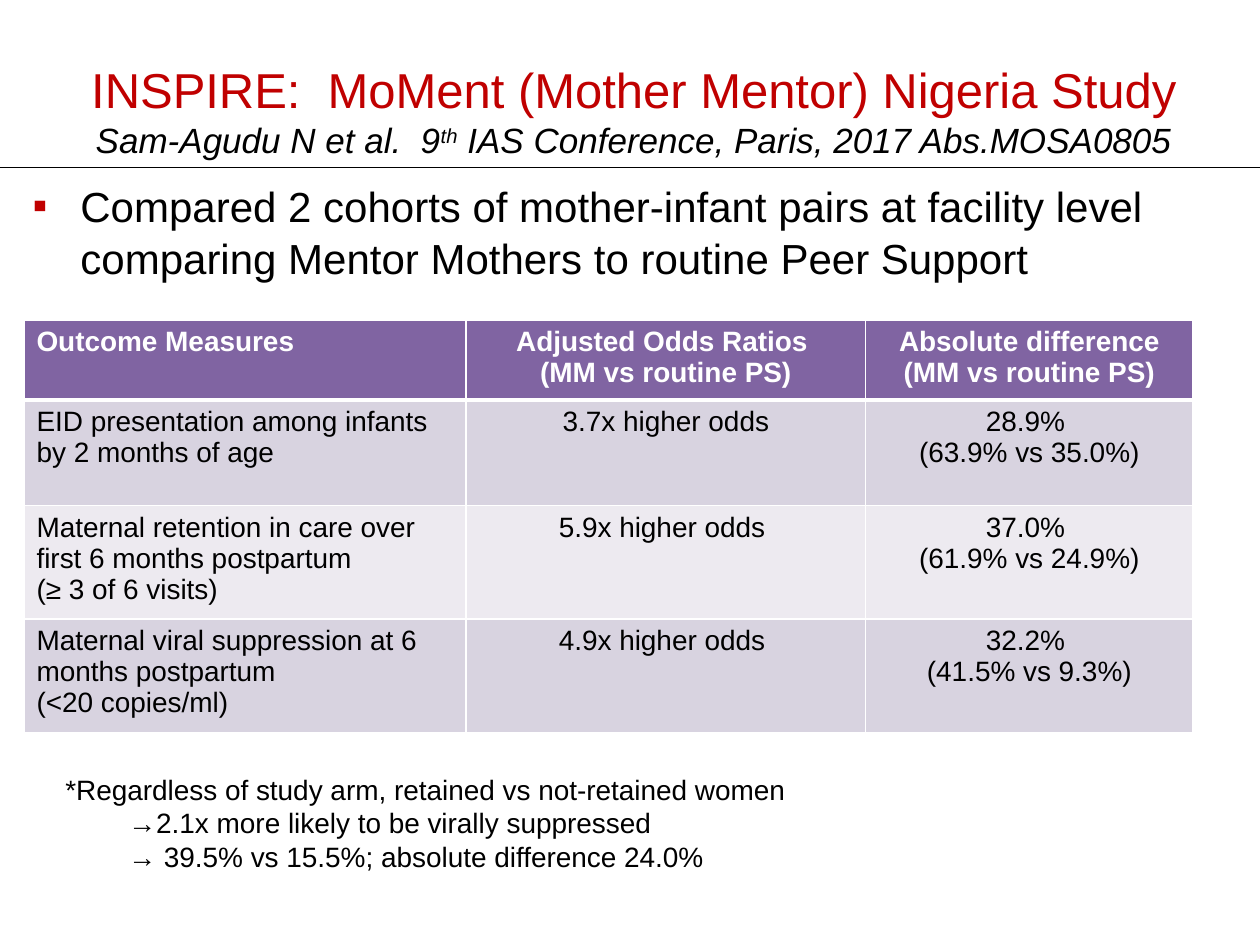
from dataclasses import dataclass

from lxml.etree import SubElement
from pptx import Presentation
from pptx.dml.color import RGBColor
from pptx.enum.shapes import MSO_CONNECTOR
from pptx.enum.text import MSO_ANCHOR, PP_ALIGN
from pptx.oxml import parse_xml
from pptx.oxml.ns import nsdecls, qn
from pptx.util import Inches, Pt


@dataclass(frozen=True)
class Theme:
    font: str = "Arial"
    red: str = "C00000"
    black: str = "000000"
    white: str = "FFFFFF"
    header: str = "8064A2"
    bands: tuple = ("D8D3E0", "EDEAF0")
    title_size: int = 28
    citation_size: int = 20
    body_size: int = 24
    small_size: int = 16


THEME = Theme()

COLUMN_WIDTHS = (3.51, 3.17, 2.6)
ROW_HEIGHTS = (0.58, 0.84, 0.84, 0.84)
OUTCOMES = (
    (("Outcome Measures",),
     ("Adjusted Odds Ratios ", "(MM vs routine PS)"),
     ("Absolute difference", "(MM vs routine PS)")),
    (("EID presentation among infants by 2 months of age",),
     ("3.7x higher odds",),
     ("28.9% ", "(63.9% vs 35.0%)")),
    (("Maternal retention in care over first 6 months postpartum", "(≥ 3 of 6 visits)"),
     ("5.9x higher odds ",),
     ("37.0% ", "(61.9% vs 24.9%)")),
    (("Maternal viral suppression at 6 months postpartum", "(<20 copies/ml)"),
     ("4.9x higher odds ",),
     ("32.2% ", "(41.5% vs 9.3%)")),
)
FOOTNOTE = (
    ("*Regardless of study arm, retained vs not-retained women", 0),
    ("→2.1x more likely to be virally suppressed", 0.5),
    ("→ 39.5% vs 15.5%; absolute difference 24.0%", 0.5),
)


def add_run(paragraph, text, size, color=THEME.black, bold=False, italic=False):
    run = paragraph.add_run()
    run.text = text
    font = run.font
    font.name = THEME.font
    font.size = Pt(size)
    font.bold = bold
    font.italic = italic
    font.color.rgb = RGBColor.from_string(color)
    return run


def add_text_frame(slide, left, top, width, height, wrap=True):
    shape = slide.shapes.add_textbox(Inches(left), Inches(top), Inches(width), Inches(height))
    shape.text_frame.word_wrap = wrap
    return shape.text_frame


def paragraphs_for(text_frame, items):
    """Yield a paragraph with each item, using the frame's first one first."""
    for index, item in enumerate(items):
        yield (text_frame.add_paragraph() if index else text_frame.paragraphs[0]), item


def set_indent(paragraph, left, first_line=0):
    properties = paragraph._p.get_or_add_pPr()
    properties.set("marL", str(Inches(left)))
    properties.set("indent", str(Inches(first_line)))
    return properties


def add_title(slide):
    text_frame = add_text_frame(slide, 0.53, 0.25, 9, 1.25)
    text_frame.vertical_anchor = MSO_ANCHOR.MIDDLE
    paragraph = text_frame.paragraphs[0]
    paragraph.alignment = PP_ALIGN.CENTER
    add_run(paragraph, "INSPIRE:  MoMent (Mother Mentor) Nigeria Study",
            THEME.title_size, THEME.red)
    paragraph.add_line_break()
    for text, baseline in (("Sam-Agudu N et al.  9", 0), ("th", 30000),
                           (" IAS Conference, Paris, 2017 Abs.MOSA0805", 0)):
        run = add_run(paragraph, text, THEME.citation_size, italic=True)
        run._r.get_or_add_rPr().set("baseline", str(baseline))


def add_rule(slide):
    rule = slide.shapes.add_connector(
        MSO_CONNECTOR.STRAIGHT, Inches(0), Inches(1.33), Inches(10), Inches(1.33))
    rule.line.color.rgb = RGBColor.from_string(THEME.black)
    rule.line.width = Pt(0.75)
    SubElement(rule._element.spPr, qn("a:effectLst"))


def set_borders(cell, **widths):
    """Draw white cell borders; the keywords L, R, T and B give widths in points."""
    properties = cell._tc.get_or_add_tcPr()
    for index, (side, width) in enumerate(widths.items()):
        properties.insert(index, parse_xml(
            f'<a:ln{side} {nsdecls("a")} w="{Pt(width)}"><a:solidFill>'
            f'<a:srgbClr val="{THEME.white}"/></a:solidFill></a:ln{side}>'))


def fill_cell(cell, lines, row, column):
    is_header = row == 0
    cell.fill.solid()
    cell.fill.fore_color.rgb = RGBColor.from_string(
        THEME.header if is_header else THEME.bands[(row - 1) % 2])
    set_borders(cell, L=1, R=1, T=3 if row == 1 else 1, B=3 if is_header else 1)
    for paragraph, line in paragraphs_for(cell.text_frame, lines):
        paragraph.alignment = PP_ALIGN.CENTER if column else PP_ALIGN.LEFT
        add_run(paragraph, line, THEME.small_size,
                THEME.white if is_header else THEME.black, bold=is_header)


def add_outcome_table(slide):
    table = slide.shapes.add_table(
        len(ROW_HEIGHTS), len(COLUMN_WIDTHS), Inches(0.19), Inches(2.54),
        Inches(sum(COLUMN_WIDTHS)), Inches(sum(ROW_HEIGHTS))).table
    for column, width in zip(table.columns, COLUMN_WIDTHS):
        column.width = Inches(width)
    for row, height in zip(table.rows, ROW_HEIGHTS):
        row.height = Inches(height)
    for row, cells in enumerate(OUTCOMES):
        for column, lines in enumerate(cells):
            fill_cell(table.cell(row, column), lines, row, column)


def add_footnote(slide):
    text_frame = add_text_frame(slide, 0.42, 6.08, 6.06, 0.91, wrap=False)
    for paragraph, (text, indent) in paragraphs_for(text_frame, FOOTNOTE):
        set_indent(paragraph, indent)
        add_run(paragraph, text, THEME.small_size)


def add_summary(slide):
    paragraph = add_text_frame(slide, 0.16, 1.37, 9.51, 2.83).paragraphs[0]
    paragraph.line_spacing = 1.03
    paragraph.space_before = Pt(4)
    properties = set_indent(paragraph, 0.38, -0.38)
    bullet_color = SubElement(properties, qn("a:buClr"))
    SubElement(bullet_color, qn("a:srgbClr"), val=THEME.red)
    SubElement(properties, qn("a:buFont"), typeface=THEME.font)
    SubElement(properties, qn("a:buChar"), char="▪")
    add_run(paragraph, "Compared 2 cohorts of mother-infant pairs at facility level "
            "comparing Mentor Mothers to routine Peer Support", THEME.body_size)


def main():
    presentation = Presentation()
    presentation.slide_width = Inches(10)
    presentation.slide_height = Inches(7.5)
    slide = presentation.slides.add_slide(presentation.slide_layouts[6])
    add_title(slide)
    add_rule(slide)
    add_outcome_table(slide)
    add_footnote(slide)
    add_summary(slide)
    presentation.save("out.pptx")


if __name__ == "__main__":
    main()
